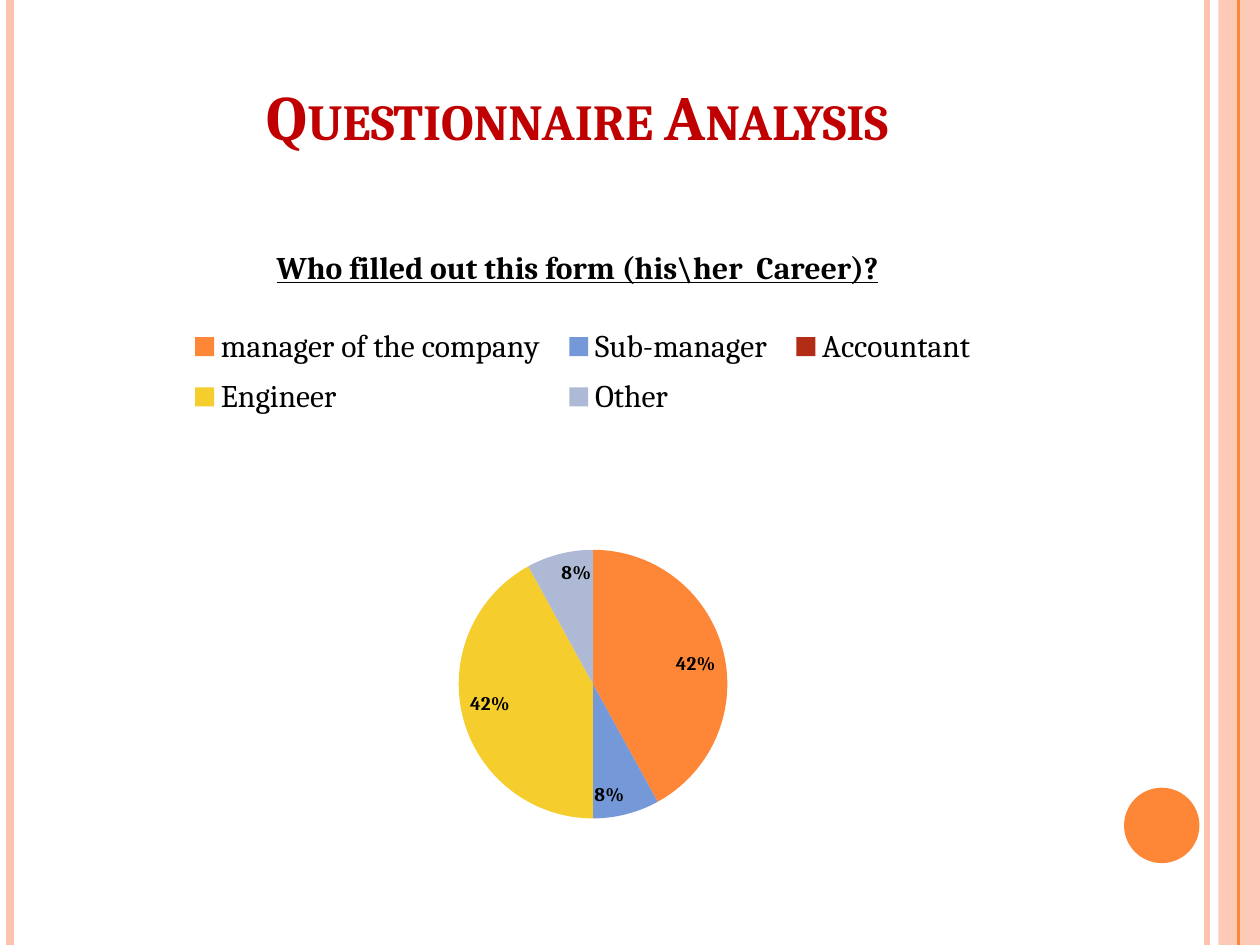
import pptx
import pptx.chart.data
import pptx.dml.color
import pptx.enum.chart
import pptx.enum.shapes
import pptx.enum.text
import pptx.oxml
import pptx.oxml.ns
import pptx.util
from pptx.util import Cm

theme = {
    "font": "Cambria",
    "peach": "FEC3AE", "orange": "FE8637", "red": "C00000", "black": "000000",
    "slices": ["FE8637", "7598D9", "B32C16", "F5CD2D", "AEBAD5"],
    "head": 36, "sub": 18, "label": 11, "base": 10,
}
qn = pptx.oxml.ns.qn
rgb = pptx.dml.color.RGBColor.from_string


def style(font, size, color="black", **more):
    look = {"name": theme["font"], "size": pptx.util.Pt(theme[size]), **more}
    for key, value in look.items():
        setattr(font, key, value)
    font.color.rgb = rgb(theme[color])


def place(node, index, inner, *box):
    """Give a chart part a fixed place, as shares of the chart's size."""
    for old in node.findall(qn("c:layout")):
        node.remove(old)
    tags = '<c:layoutTarget val="inner"/>' if inner else ""
    tags += '<c:xMode val="edge"/><c:yMode val="edge"/>'
    for name, value in zip("xywh", box):
        tags += f'<c:{name} val="{value}"/>'
    node.insert(index, pptx.oxml.parse_xml(
        f'<c:layout {pptx.oxml.ns.nsdecls("c")}>'
        f"<c:manualLayout>{tags}</c:manualLayout></c:layout>"))


deck = pptx.Presentation()
deck.slide_width, deck.slide_height = Cm(25.4), Cm(19.05)
slide = deck.slides.add_slide(deck.slide_layouts[6])
forms = slide.shapes
kinds = pptx.enum.shapes.MSO_SHAPE

# Side band and disc
for kind, box, color, alpha in [
    (kinds.RECTANGLE, (24.56, 0, 0.84, 19.05), "peach", 87),
    (kinds.OVAL, (22.66, 15.88, 1.52, 1.52), "orange", 100),
]:
    form = forms.add_shape(kind, *map(Cm, box))
    form.shadow.inherit = False
    form.fill.solid()
    form.fill.fore_color.rgb = rgb(theme[color])
    form.line.fill.background()
    if alpha < 100:
        tint = form.fill._xPr.find(".//" + qn("a:srgbClr"))
        tint.append(pptx.oxml.parse_xml(
            f'<a:alpha {pptx.oxml.ns.nsdecls("a")} val="{alpha * 1000}"/>'))

# Upright rules
for left, color, width in [
    (24.33, "peach", 3), (0.21, "peach", 4.5),
    (24.97, "orange", 1.5), (24.77, "peach", 0.75),
]:
    rule = forms.add_connector(
        pptx.enum.shapes.MSO_CONNECTOR.STRAIGHT,
        Cm(left), 0, Cm(left), deck.slide_height)
    rule.line.color.rgb = rgb(theme[color])
    rule.line.width = pptx.util.Pt(width)
    rule._element.spPr.append(pptx.oxml.parse_xml(
        f'<a:effectLst {pptx.oxml.ns.nsdecls("a")}/>'))

# Heading
frame = forms.add_textbox(Cm(1.27), Cm(0.03), Cm(20.75), Cm(3.18)).text_frame
frame.word_wrap = True
frame.vertical_anchor = pptx.enum.text.MSO_ANCHOR.BOTTOM
para = frame.paragraphs[0]
para.alignment = pptx.enum.text.PP_ALIGN.CENTER
run = para.add_run()
run.text = "Questionnaire Analysis"
style(run.font, "head", "red", bold=True)
run.font._element.set("cap", "small")

# Pie chart
data = pptx.chart.data.CategoryChartData()
data.categories = ["manager of the company", "Sub-manager", "Accountant",
                   "Engineer", "Other"]
data.add_series("Series 1", [42, 8, 0, 42, 8])
chart = forms.add_chart(
    pptx.enum.chart.XL_CHART_TYPE.PIE,
    Cm(1.27), Cm(4.45), Cm(20.75), Cm(13.54), data).chart
style(chart.font, "base")
plot = chart.plots[0]
plot.vary_by_categories = True
place(chart.element.find(".//" + qn("c:plotArea")), 0, True,
      0.17, 0.49, 0.69, 0.4)
for index, color in enumerate(theme["slices"]):
    fill = plot.series[0].points[index].format.fill
    fill.solid()
    fill.fore_color.rgb = rgb(color)

# Chart title
chart.has_title = True
para = chart.chart_title.text_frame.paragraphs[0]
run = para.add_run()
run.text = "Who filled out this form (his\\her  Career)?"
style(run.font, "sub", bold=True, underline=True)

# Legend
chart.has_legend = True
legend = chart.legend
legend.position = pptx.enum.chart.XL_LEGEND_POSITION.TOP
legend.include_in_layout = False
style(legend.font, "sub")
place(chart.element.find(".//" + qn("c:legend")), 1, False,
      0.11, 0.14, 0.79, 0.17)

# Slice labels, none for zero
plot.has_data_labels = True
labels = plot.data_labels
for key, value in {
    "show_percentage": True, "show_value": False,
    "number_format": "0%;;", "number_format_is_linked": False,
    "position": pptx.enum.chart.XL_LABEL_POSITION.INSIDE_END,
}.items():
    setattr(labels, key, value)
style(labels.font, "label", bold=True)

deck.save("out.pptx")
